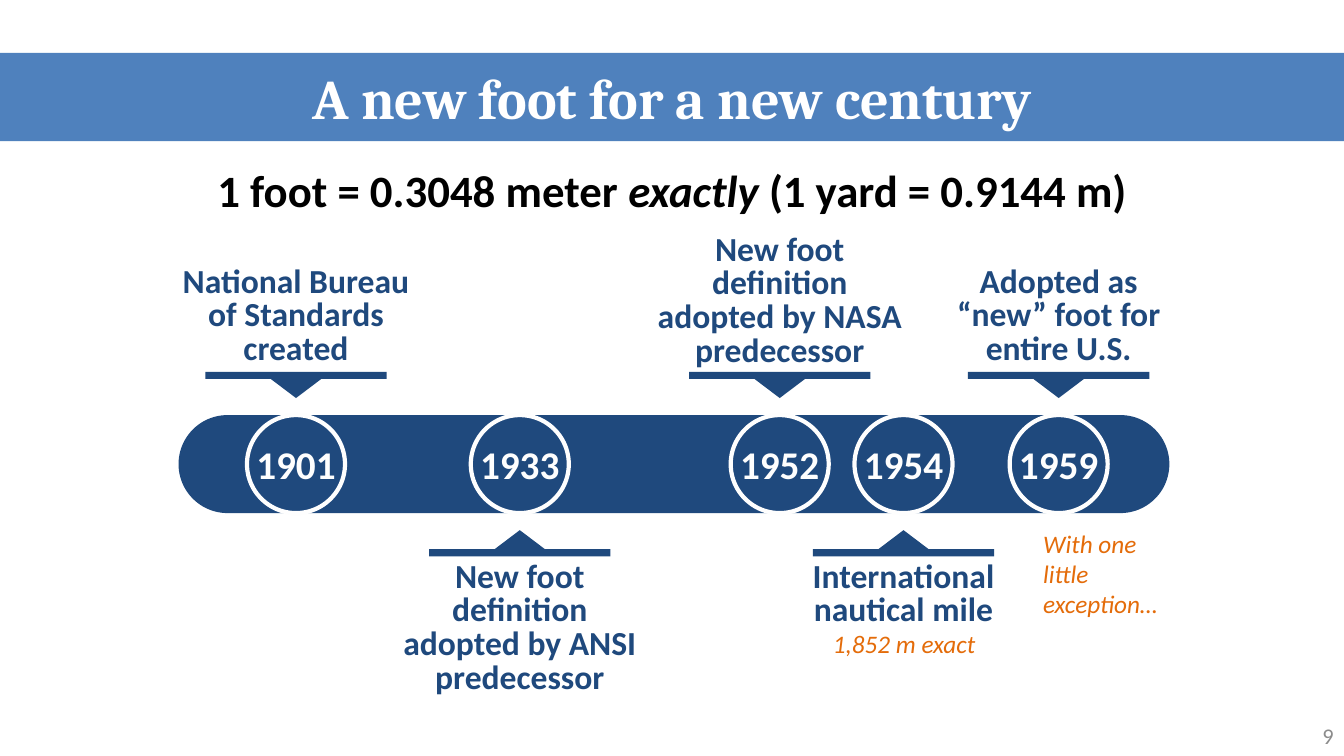
from dataclasses import dataclass

from pptx import Presentation
from pptx.dml.color import RGBColor as RGB
from pptx.enum.shapes import MSO_SHAPE as SHAPE
from pptx.enum.text import MSO_ANCHOR as ANCHOR, PP_ALIGN as ALIGN
from pptx.util import Cm, Pt

TITLE = "A new foot for a new century"
# (text, italic) runs
STATEMENT = [("1 foot = 0.3048 meter ", False), ("exactly ", True),
             ("(1 yard = 0.9144 m)", False)]
PAGE = "9"

# year, centre x, label, label above the bar, label width, label height (cm)
EVENTS = [
    ("1901", 7.46, "National Bureau of Standards created", True, 6.86, 2.78),
    ("1933", 13.1, "New foot definition adopted by ANSI predecessor", False, 6.86, 3.85),
    ("1952", 19.65, "New foot definition adopted by NASA predecessor", True, 6.86, 3.59),
    ("1954", 22.77, "International nautical mile", False, 5.82, 2.85),
    ("1959", 26.68, "Adopted as “new” foot for entire U.S.", True, 6.86, 2.78),
]
# text, left, top, width, height (cm), alignment
NOTES = [
    ("1,852 m exact", 19.8, 15.72, 5.97, 1.02, ALIGN.CENTER),
    ("With one little exception…", 26.04, 13.18, 3.53, 2.57, ALIGN.LEFT),
]


@dataclass(frozen=True)
class Theme:
    navy: RGB = RGB(0x1F, 0x49, 0x7D)
    band: RGB = RGB(0x4F, 0x81, 0xBD)
    white: RGB = RGB(0xFF, 0xFF, 0xFF)
    ring: RGB = RGB(0xFE, 0xFE, 0xFE)
    black: RGB = RGB(0, 0, 0)
    orange: RGB = RGB(0xE4, 0x6C, 0x0A)
    grey: RGB = RGB(0x8C, 0x8C, 0x8C)
    heading: str = "Cambria"
    body: str = "Calibri"
    title_pt: int = 40
    statement_pt: int = 32
    year_pt: int = 28
    label_pt: int = 24
    note_pt: int = 18
    page_pt: int = 16


T = Theme()
SLIDE_W, SLIDE_H = 33.87, 19.05
BAR_LEFT, BAR_TOP, BAR_W, BAR_H = 4.5, 10.46, 24.97, 2.47
YEAR_W = 2.67  # wider than the circle, so that four digits fit on one line
RULE_W, RULE_H = 4.57, 0.18
POINTER_W, POINTER_H = 1.27, 0.48
POINTER_GAP = 0.43  # between pointer tip and bar


def write(tf, runs, size, color, font=T.body, bold=False, italic=False,
          align=ALIGN.CENTER, anchor=ANCHOR.TOP, spacing=None):
    """Fill a text frame with a string or a list of (text, italic) runs."""
    tf.word_wrap = True
    tf.vertical_anchor = anchor
    p = tf.paragraphs[0]
    p.alignment = align
    if spacing:
        p.line_spacing = Pt(spacing)
    for text, slanted in [(runs, italic)] if isinstance(runs, str) else runs:
        r = p.add_run()
        r.text = text
        f = r.font
        f.name, f.size, f.bold, f.italic = font, Pt(size), bold, slanted
        f.color.rgb = color


def add_text(s, box, runs, size, color, **fmt):
    tb = s.shapes.add_textbox(*map(Cm, box))
    write(tb.text_frame, runs, size, color, **fmt)


def add_solid(s, kind, box):
    sp = s.shapes.add_shape(kind, *map(Cm, box))
    sp.shadow.inherit = False
    sp.fill.solid()
    sp.fill.fore_color.rgb = T.navy
    sp.line.fill.background()
    return sp


def add_title(s):
    title = s.shapes.title
    title.left, title.top, title.width, title.height = map(Cm, (0, 1.33, SLIDE_W, 2.23))
    title.fill.solid()
    title.fill.fore_color.rgb = T.band
    write(title.text_frame, TITLE, T.title_pt, T.white, font=T.heading,
          bold=True, anchor=ANCHOR.MIDDLE)


def add_event(s, year, x, label, above, width, height):
    """Draw a year circle with its pointer, rule and label on one side of the bar."""
    circle = add_solid(s, SHAPE.OVAL, (x - BAR_H / 2, BAR_TOP, BAR_H, BAR_H))
    circle.line.color.rgb = T.ring
    circle.line.width = Pt(3)
    add_text(s, (x - YEAR_W / 2, BAR_TOP, YEAR_W, BAR_H), year,
             T.year_pt, T.ring, bold=True, anchor=ANCHOR.MIDDLE)

    if above:
        pointer_top = BAR_TOP - POINTER_GAP - POINTER_H
        rule_top = pointer_top - RULE_H
        label_top = rule_top - height
    else:
        pointer_top = BAR_TOP + BAR_H + POINTER_GAP
        rule_top = pointer_top + POINTER_H
        label_top = rule_top + RULE_H
    pointer = add_solid(s, SHAPE.ISOSCELES_TRIANGLE,
                        (x - POINTER_W / 2, pointer_top, POINTER_W, POINTER_H))
    pointer.rotation = 180 if above else 0
    add_solid(s, SHAPE.RECTANGLE, (x - RULE_W / 2, rule_top, RULE_W, RULE_H))
    add_text(s, (x - width / 2, label_top, width, height), label,
             T.label_pt, T.navy, bold=True, spacing=T.label_pt)


def main():
    prs = Presentation()
    prs.slide_width, prs.slide_height = Cm(SLIDE_W), Cm(SLIDE_H)
    s = prs.slides.add_slide(prs.slide_layouts[5])
    add_title(s)
    add_text(s, (4.24, 3.97, 25.4, 1.63), STATEMENT, T.statement_pt, T.black, bold=True)
    bar = add_solid(s, SHAPE.ROUNDED_RECTANGLE, (BAR_LEFT, BAR_TOP, BAR_W, BAR_H))
    bar.adjustments[0] = 0.5
    for event in EVENTS:
        add_event(s, *event)
    for text, *box, align in NOTES:
        add_text(s, box, text, T.note_pt, T.orange, italic=True, align=align)
    add_text(s, (25.96, 18.03, 7.9, 1.02), PAGE, T.page_pt, T.grey,
             align=ALIGN.RIGHT, anchor=ANCHOR.MIDDLE)
    prs.save("out.pptx")


if __name__ == "__main__":
    main()
